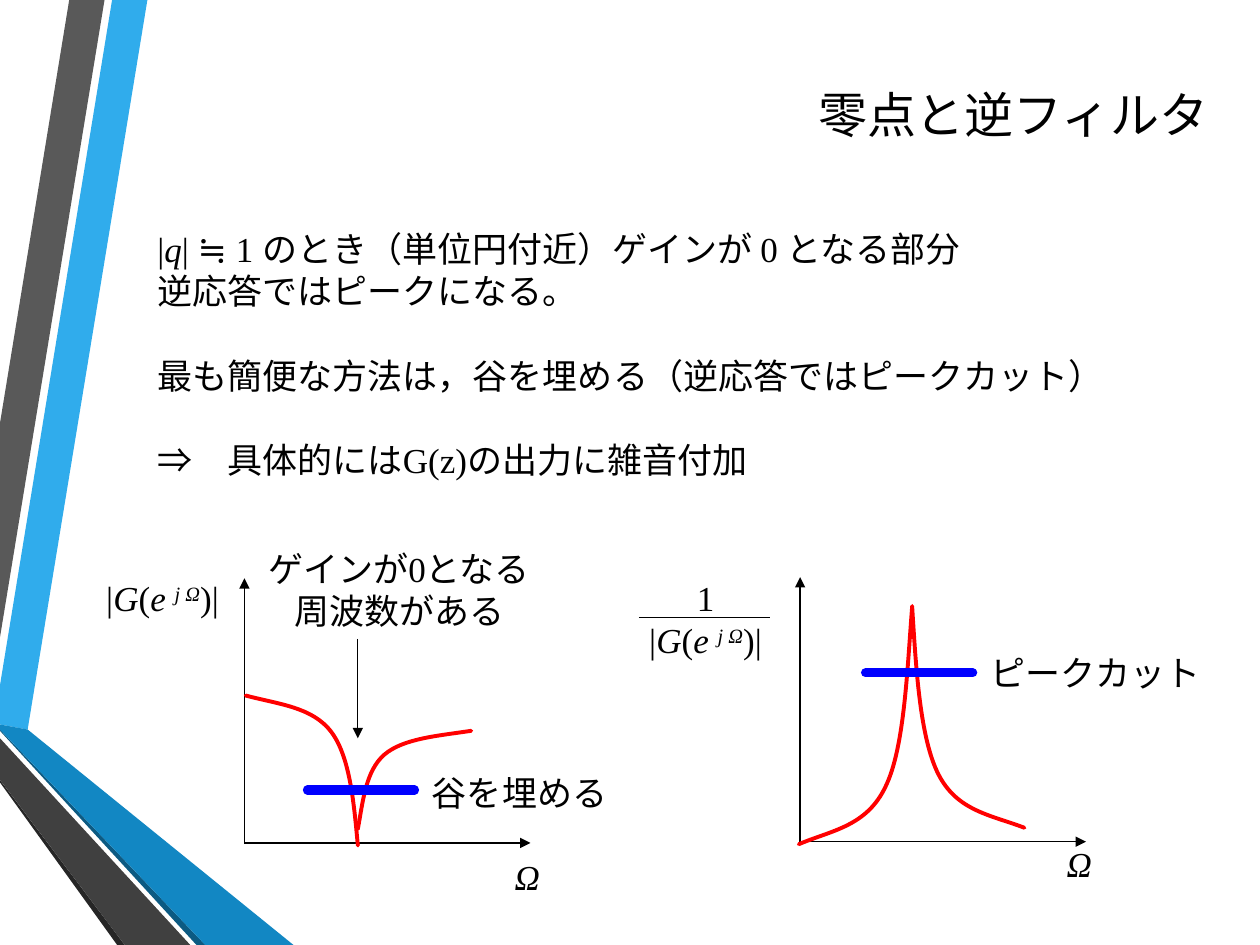
from lxml import etree
from pptx import Presentation, util as u
from pptx.dml.color import RGBColor
from pptx.enum import text as t, shapes as s
from pptx.oxml.ns import qn

SERIF = "Times New Roman"
BLACK, RED, BLUE = "000000", "FF0000", "0000FF"
LEFT, MID, RIGHT = t.PP_ALIGN.LEFT, t.PP_ALIGN.CENTER, t.PP_ALIGN.RIGHT

BANDS = [
    ("30ACEC", [(0, 5.44), (0, 5.75), (0.22, 5.79), (1.17, 0), (0.89, 0)]),
    ("595959", [(0.83, 0), (0.55, 0), (0, 3.36), (0, 5.06)]),
    ("262626", [(0, 6.19), (0, 6.21), (0.93, 7.5), (0.99, 7.5)]),
    ("0C5A82", [(0, 5.79), (0, 5.8), (1.56, 7.5), (1.63, 7.5)]),
    ("1287C3", [(0, 5.79), (1.63, 7.5), (2.33, 7.5), (0.22, 5.79), (0, 5.75)]),
    ("404040", [(0, 6.19), (0.99, 7.5), (1.51, 7.5), (0, 5.86)]),
]

# A run is (text, style): "i" italic, "^" superscript
GAIN = [("|", ""), ("G", "i"), ("(", ""), ("e ", "i"), ("j Ω", "i^"), (")|", "")]
OMEGA = [[("Ω", "i")]]
BODY = [
    [("|", ""), ("q", "i"), ("| ≒ 1 のとき（単位円付近）ゲインが 0 となる部分", "")],
    [("逆応答ではピークになる。", "")],
    [("最も簡便な方法は，谷を埋める（逆応答ではピークカット）", "")],
    [("⇒　具体的にはG(z)の出力に雑音付加", "")],
]
# box, alignment, paragraphs
LABELS = [
    ((1.95, 4.3, 2.44, 0.77), MID, [[("ゲインが0となる", "")], [("周波数がある", "")]]),
    ((3.74, 6.74, 0.89, 0.44), MID, OMEGA),
    ((0.62, 4.53, 1.34, 0.44), MID, [GAIN]),
    ((8.12, 6.64, 0.89, 0.44), MID, OMEGA),
    ((4.7, 4.53, 1.8, 0.77), MID, [[("1", "")], GAIN]),
    ((3.33, 6.07, 1.69, 0.44), LEFT, [[("谷を埋める", "")]]),
    ((7.76, 5.12, 1.94, 0.44), LEFT, [[("ピークカット", "")]]),
]

ORIGINS = [(1.94, 6.69), (6.35, 6.68)]
AXIS_W, AXIS_H = 2.27, 2.1
# Bezier points: start, then two controls and an end for each piece
CURVES = [
    [(1.95, 5.52), (2.21, 5.59), (2.48, 5.61), (2.63, 5.81),
     (2.78, 6.01), (2.81, 6.39), (2.84, 6.71)],
    [(3.74, 5.8), (3.48, 5.84), (3.2, 5.86), (3.05, 5.99),
     (2.9, 6.12), (2.88, 6.37), (2.84, 6.58)],
    [(6.34, 6.7), (6.6, 6.59), (6.88, 6.56), (7.03, 6.24),
     (7.18, 5.93), (7.2, 5.31), (7.24, 4.81)],
    [(8.13, 6.57), (7.87, 6.47), (7.6, 6.44), (7.45, 6.15),
     (7.3, 5.86), (7.27, 5.3), (7.24, 4.83)],
]
CUTS = [(2.44, 6.27), (6.87, 5.34)]
CUT_W = 0.85


def color(code):
    return RGBColor.from_string(code)


def stroke(shape, code, width):
    shape.line.color.rgb = color(code)
    shape.line.width = u.Pt(width)


def cap(shape):
    shape.line._get_or_add_ln().set("cap", "rnd")


def outline(slide, points, close):
    pts = [(u.Inches(x), u.Inches(y)) for x, y in points]
    pen = slide.shapes.build_freeform(*pts[0])
    pen.add_line_segments(pts[1:], close=close)
    shape = pen.convert_to_shape()
    shape.shadow.inherit = False
    return shape


def band(slide, code, points):
    shape = outline(slide, points, True)
    shape.fill.solid()
    shape.fill.fore_color.rgb = color(code)
    shape.line.fill.background()


def curve(slide, points):
    """Draw the control points, then turn each three segments into one Bezier."""
    shape = outline(slide, points, False)
    shape.fill.background()
    stroke(shape, RED, 2.25)
    cap(shape)
    trace = next(shape._element.iter(qn("a:path")))
    segs = trace.findall(qn("a:lnTo"))
    for i in range(0, len(segs), 3):
        bend = etree.SubElement(trace, qn("a:cubicBezTo"))
        for seg in segs[i:i + 3]:
            bend.append(seg[0])
            trace.remove(seg)


def line(slide, start, end, code=BLACK, width=0.75, arrow=False):
    ends = [u.Inches(v) for v in (*start, *end)]
    link = slide.shapes.add_connector(s.MSO_CONNECTOR.STRAIGHT, *ends)
    stroke(link, code, width)
    if arrow:
        etree.SubElement(link.line._get_or_add_ln(), qn("a:tailEnd"), type="triangle")
    etree.SubElement(link._element.spPr, qn("a:effectLst"))
    return link


def write(slide, box, align, paras, size=20, font=SERIF):
    frame = slide.shapes.add_textbox(*map(u.Inches, box)).text_frame
    frame.word_wrap = True
    for i, runs in enumerate(paras):
        para = frame.paragraphs[0] if i == 0 else frame.add_paragraph()
        para.alignment = align
        para.font.size = u.Pt(size)
        para.font.name = font
        para.font.color.rgb = color(BLACK)
        for words, style in runs:
            run = para.add_run()
            run.text = words
            if "i" in style:
                run.font.italic = True
            if "^" in style:
                run.font._element.set("baseline", "30000")
    return frame


def main():
    deck = Presentation()
    deck.slide_width, deck.slide_height = u.Inches(10), u.Inches(7.5)
    slide = deck.slides.add_slide(deck.slide_layouts[6])

    for code, points in BANDS:
        band(slide, code, points)

    title = write(slide, (3.49, 0.18, 6.2, 1.45), RIGHT,
                  [[("零点と逆フィルタ", "")]], 28, "Calibri")
    title.vertical_anchor = t.MSO_ANCHOR.MIDDLE
    body = write(slide, (1.15, 1.76, 8.41, 2.12), LEFT, BODY)
    for para in body.paragraphs[2:]:
        para.space_before = u.Pt(24)

    for x, y in ORIGINS:
        line(slide, (x, y), (x + AXIS_W, y), arrow=True)
        line(slide, (x, y), (x, y - AXIS_H), arrow=True)
    for points in CURVES:
        curve(slide, points)
    line(slide, (2.84, 5.07), (2.84, 5.86), arrow=True)
    line(slide, (5.07, 4.9), (6.11, 4.9))
    for x, y in CUTS:
        cap(line(slide, (x, y), (x + CUT_W, y), BLUE, 5.25))
    for box, align, paras in LABELS:
        write(slide, box, align, paras)

    deck.save("out.pptx")


if __name__ == "__main__":
    main()
